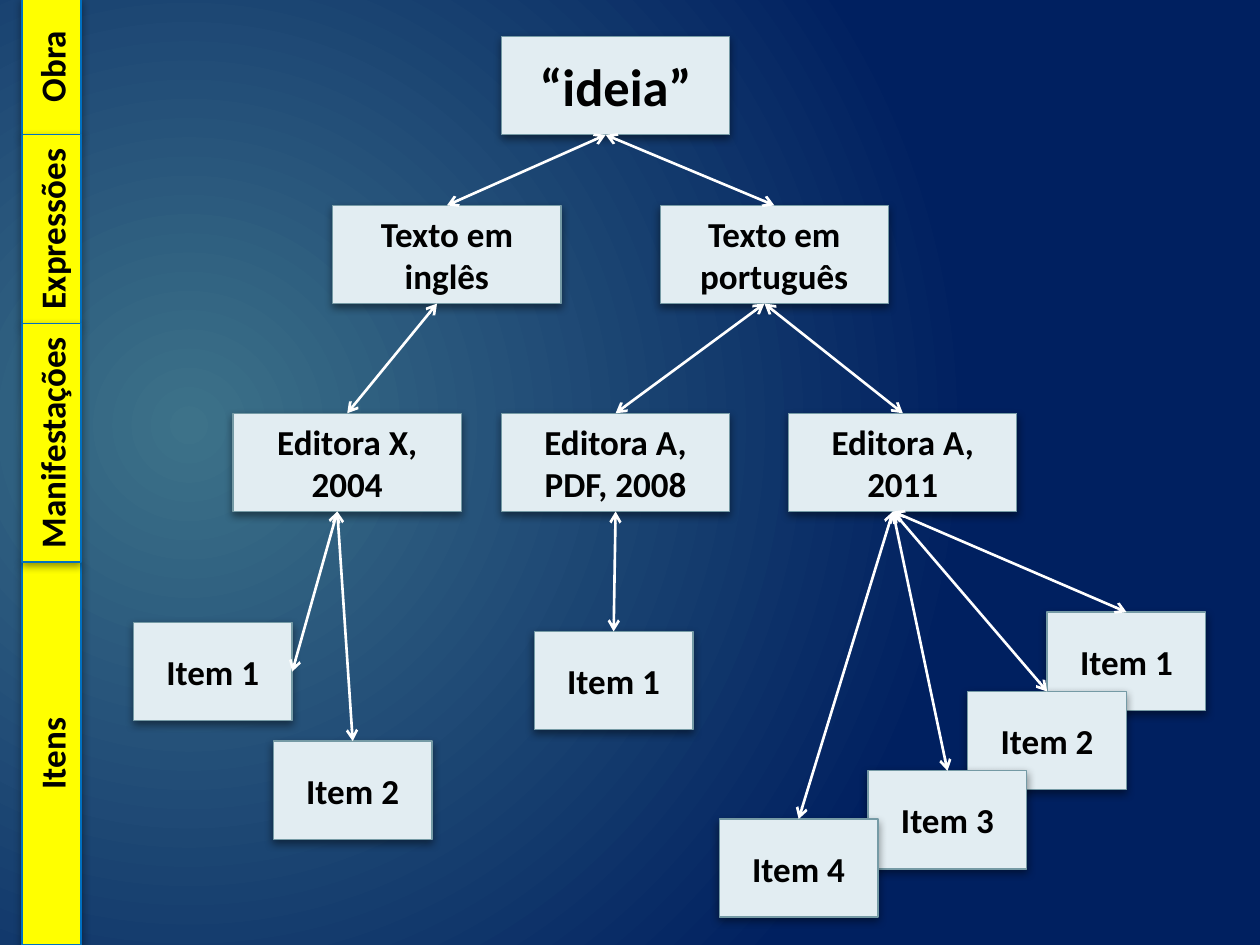
from lxml.etree import SubElement as Sub
from pptx import Presentation
from pptx.dml.color import RGBColor as RGB
from pptx.enum.shapes import MSO_CONNECTOR as Conn, MSO_SHAPE as Shape
from pptx.enum.text import MSO_ANCHOR as Anchor, PP_ALIGN as Align
from pptx.oxml.ns import qn
from pptx.util import Cm, Pt

WIDE, ITEM, HIGH = 4.6, 3.2, 1.98
ROW1, ROW2, ROW3 = 0.74, 4.14, 8.33
SHIFT = 0.2

# key: text, left, top, width, parent
NODES = {
    "work": ("“ideia”", 10.11, ROW1, WIDE, None),
    "en": ("Texto em inglês", 6.71, ROW2, WIDE, "work"),
    "pt": ("Texto em português", 13.31, ROW2, WIDE, "work"),
    "x04": ("Editora X, 2004", 4.7, ROW3, WIDE, "en"),
    "a08": ("Editora A, PDF, 2008", 10.11, ROW3, WIDE, "pt"),
    "a11": ("Editora A, 2011", 15.9, ROW3, WIDE, "pt"),
    "a08-1": ("Item 1", 10.77, 12.73, ITEM, "a08"),
    "a11-1": ("Item 1", 21.11, 12.34, ITEM, "a11"),
    "a11-2": ("Item 2", 19.51, 13.94, ITEM, "a11"),
    "a11-3": ("Item 3", 17.5, 15.54, ITEM, "a11"),
    "a11-4": ("Item 4", 14.5, 16.51, ITEM, "a11"),
    "x04-1": ("Item 1", 2.69, 12.55, ITEM, "x04"),
    "x04-2": ("Item 2", 5.51, 14.94, ITEM, "x04"),
}
BANDS = [("Obra", -0.03, 2.71), ("Expressões", 2.71, 6.52),
         ("Itens", 11.33, 19.05), ("Manifestações", 6.52, 11.33)]
BAND_MID, BAND_WIDE = 1.04, 1.19


def tint(hue):
    return RGB.from_string(hue)


def add_box(text, left, top, wide, high, fill, edge, size=20):
    box = slide.shapes.add_shape(Shape.RECTANGLE, Cm(left), Cm(top), Cm(wide), Cm(high))
    box.fill.solid()
    box.fill.fore_color.rgb = tint(fill)
    box.line.color.rgb = tint(edge)
    box.line.width = Pt(0.75)
    box.shadow.inherit = False
    glow = box.element.spPr.find(qn("a:effectLst"))
    shade = Sub(glow, qn("a:outerShdw"), blurRad=str(Pt(5)), dist=str(Pt(2)),
                dir="5400000", rotWithShape="0")
    black = Sub(shade, qn("a:srgbClr"), val="000000")
    Sub(black, qn("a:alpha"), val="43000")
    frame = box.text_frame
    frame.word_wrap = True
    frame.vertical_anchor = Anchor.MIDDLE
    frame.text = text
    para = frame.paragraphs[0]
    para.alignment = Align.CENTER
    para.font.name = "Calibri"
    para.font.size = Pt(size)
    para.font.bold = True
    para.font.color.rgb = tint("000000")
    return box


def add_arrow(start, end):
    link = slide.shapes.add_connector(Conn.STRAIGHT, *map(Cm, start + end))
    link.line.color.rgb = tint("FFFFFF")
    link.line.width = Pt(1.5)
    props = link.element.spPr
    for tip in ("a:headEnd", "a:tailEnd"):
        Sub(props.find(qn("a:ln")), qn(tip), type="arrow")
    Sub(props, qn("a:effectLst"))


def foot(key):
    text, left, top, wide, up = NODES[key]
    shift = 0 if key == "a08" else SHIFT
    return left + wide / 2 - shift, top + HIGH


deck = Presentation()
deck.slide_width, deck.slide_height = Cm(25.4), Cm(19.05)
slide = deck.slides.add_slide(deck.slide_layouts[6])

back = slide.background.fill
back.gradient()
for stop, hue in zip(back.gradient_stops, ("3D7289", "002060")):
    stop.color.rgb = tint(hue)
grad = slide.element.find(".//" + qn("a:gradFill"))
grad.remove(grad.find(qn("a:lin")))
ring = Sub(grad, qn("a:path"), path="circle")
Sub(ring, qn("a:fillToRect"), l="15000", t="50000", r="85000", b="60000")

for key, (text, left, top, wide, up) in NODES.items():
    add_box(text, left, top, wide, HIGH, "E2EDF2", "759AA5", 20 if up else 30)
    if up:
        side = (left + wide, top + HIGH / 2)
        crown = (left + wide / 2, top)
        add_arrow(foot(up), side if key == "x04-1" else crown)

for text, top, end in BANDS:
    span = end - top
    band = add_box(text, BAND_MID - span / 2, (top + end - BAND_WIDE) / 2,
                   span, BAND_WIDE, "FFFF00", "0070C0")
    band.rotation = 270

deck.save("out.pptx")
